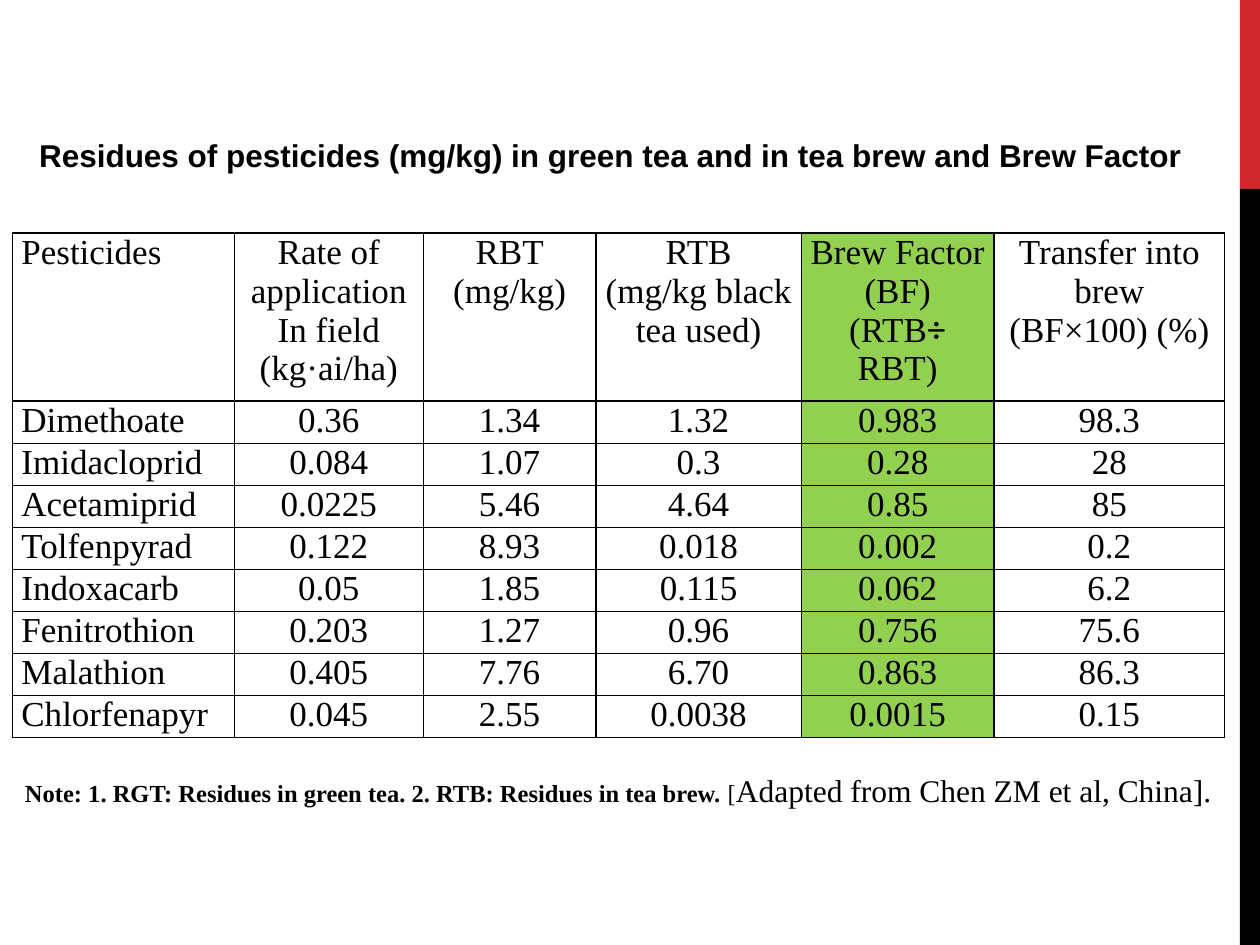
from typing import NamedTuple

from lxml.etree import SubElement
from pptx import Presentation
from pptx.dml.color import RGBColor
from pptx.enum.shapes import MSO_SHAPE
from pptx.enum.text import MSO_ANCHOR, MSO_AUTO_SIZE, PP_ALIGN
from pptx.oxml.ns import qn
from pptx.util import Inches, Pt

BLACK = RGBColor(0x00, 0x00, 0x00)
RED = RGBColor(0xD1, 0x28, 0x2E)
GREEN = RGBColor(0x92, 0xD0, 0x50)

SANS = "Arial"
SERIF = "Times New Roman"
SLIDE_WIDTH, SLIDE_HEIGHT = Inches(10), Inches(7.5)
TITLE_ONLY = 5


class Bar(NamedTuple):
    """A side bar whose top and height are shares of the slide's height."""
    top: float
    height: float
    color: RGBColor


class Run(NamedTuple):
    text: str
    bold: bool = False
    size: float | None = None


SIDE_BARS = [Bar(0, 0.2, RED), Bar(0.2, 0.8, BLACK)]
BAR_LEFT = 0.984

TITLE = "Residues of pesticides (mg/kg) in green tea and in tea brew and Brew Factor"
NOTE = [
    Run("Note: 1. RGT: Residues in green tea. 2. RTB: Residues in tea brew.", bold=True),
    Run(" ["),
    Run("Adapted from Chen ZM et al, China].", size=18),
]

COLUMN_WIDTHS = [1.76, 1.5, 1.37, 1.63, 1.53, 1.83]
TABLE_HEIGHT, HEADER_HEIGHT = 4, 1.33
BREW_FACTOR_COLUMN = 4
HEADER = [
    ["Pesticides"],
    ["Rate of application", "In field (kg·ai/ha)"],
    ["RBT", "(mg/kg)"],
    ["RTB", "(mg/kg black tea used)"],
    ["Brew Factor (BF)", [Run("(RTB"), Run("÷", bold=True), Run(" RBT)")]],
    ["Transfer into brew", "(BF×100) (%)"],
]
RESIDUES = [
    ("Dimethoate", "0.36", "1.34", "1.32", "0.983", "98.3"),
    ("Imidacloprid", "0.084", "1.07", "0.3", "0.28", "28"),
    ("Acetamiprid", "0.0225", "5.46", "4.64", "0.85", "85"),
    ("Tolfenpyrad", "0.122", "8.93", "0.018", "0.002", "0.2"),
    ("Indoxacarb", "0.05", "1.85", "0.115", "0.062", "6.2"),
    ("Fenitrothion", "0.203", "1.27", "0.96", "0.756", "75.6"),
    ("Malathion", "0.405", "7.76", "6.70", "0.863", "86.3"),
    ("Chlorfenapyr", "0.045", "2.55", "0.0038", "0.0015", "0.15"),
]


def write_text(frame, paragraphs, *, font=SERIF, size=20, bold=False, align=PP_ALIGN.LEFT) -> None:
    """Fill a text frame; each paragraph is a string or a list of runs."""
    for index, content in enumerate(paragraphs):
        paragraph = frame.paragraphs[0] if index == 0 else frame.add_paragraph()
        paragraph.alignment = align
        paragraph.line_spacing = 1.0
        paragraph.space_before = Pt(0)
        for part in [Run(content, bold)] if isinstance(content, str) else content:
            run = paragraph.add_run()
            run.text = part.text
            run.font.name = font
            run.font.size = Pt(part.size or size)
            run.font.bold = part.bold
            run.font.color.rgb = BLACK


def place(shape, left: float, top: float, width: float, height: float) -> None:
    shape.left, shape.top = Inches(left), Inches(top)
    shape.width, shape.height = Inches(width), Inches(height)


def add_bar(slide, bar: Bar) -> None:
    shape = slide.shapes.add_shape(
        MSO_SHAPE.RECTANGLE,
        int(SLIDE_WIDTH * BAR_LEFT), int(SLIDE_HEIGHT * bar.top),
        int(SLIDE_WIDTH * (1 - BAR_LEFT)), int(SLIDE_HEIGHT * bar.height),
    )
    shape.shadow.inherit = False
    shape.fill.solid()
    shape.fill.fore_color.rgb = bar.color
    shape.line.fill.background()


def add_title(slide) -> None:
    title = slide.shapes.title
    place(title, 0.21, 1.03, 9.39, 0.4)
    frame = title.text_frame
    frame.word_wrap = True
    frame.auto_size = MSO_AUTO_SIZE.SHAPE_TO_FIT_TEXT
    frame.vertical_anchor = MSO_ANCHOR.TOP
    write_text(frame, [TITLE], font=SANS, size=18, bold=True)


def add_note(slide) -> None:
    box = slide.shapes.add_textbox(0, 0, 0, 0)
    place(box, 0.1, 6.07, 9.7, 0.4)
    frame = box.text_frame
    frame.word_wrap = False
    frame.auto_size = MSO_AUTO_SIZE.SHAPE_TO_FIT_TEXT
    frame.vertical_anchor = MSO_ANCHOR.MIDDLE
    write_text(frame, [NOTE], size=14)


def set_borders(cell, color: RGBColor, width: float) -> None:
    properties = cell._tc.get_or_add_tcPr()
    for side in ("a:lnL", "a:lnR", "a:lnT", "a:lnB"):
        line = SubElement(properties, qn(side), w=str(Pt(width)))
        fill = SubElement(line, qn("a:solidFill"))
        SubElement(fill, qn("a:srgbClr"), val=str(color))


def format_cell(cell, paragraphs, column: int) -> None:
    cell.margin_left = cell.margin_right = Inches(0.07)
    cell.margin_top = cell.margin_bottom = 0
    set_borders(cell, BLACK, 1)
    if column == BREW_FACTOR_COLUMN:
        cell.fill.solid()
        cell.fill.fore_color.rgb = GREEN
    else:
        cell.fill.background()
    align = PP_ALIGN.LEFT if column == 0 else PP_ALIGN.CENTER
    write_text(cell.text_frame, paragraphs, align=align)


def add_residue_table(slide) -> None:
    rows = [HEADER] + [[[value] for value in row] for row in RESIDUES]
    table = slide.shapes.add_table(
        len(rows), len(COLUMN_WIDTHS), Inches(0.1), Inches(1.85),
        Inches(sum(COLUMN_WIDTHS)), Inches(TABLE_HEIGHT),
    ).table
    table.horz_banding = False
    table.first_row = False
    for column, width in zip(table.columns, COLUMN_WIDTHS):
        column.width = Inches(width)
    body_height = (TABLE_HEIGHT - HEADER_HEIGHT) / len(RESIDUES)
    for row_index, row in enumerate(rows):
        table.rows[row_index].height = Inches(body_height if row_index else HEADER_HEIGHT)
        for column_index, paragraphs in enumerate(row):
            format_cell(table.cell(row_index, column_index), paragraphs, column_index)


def main() -> None:
    presentation = Presentation()
    presentation.slide_width, presentation.slide_height = SLIDE_WIDTH, SLIDE_HEIGHT
    slide = presentation.slides.add_slide(presentation.slide_layouts[TITLE_ONLY])
    for bar in SIDE_BARS:
        add_bar(slide, bar)
    add_title(slide)
    add_residue_table(slide)
    add_note(slide)
    presentation.save("out.pptx")


if __name__ == "__main__":
    main()
